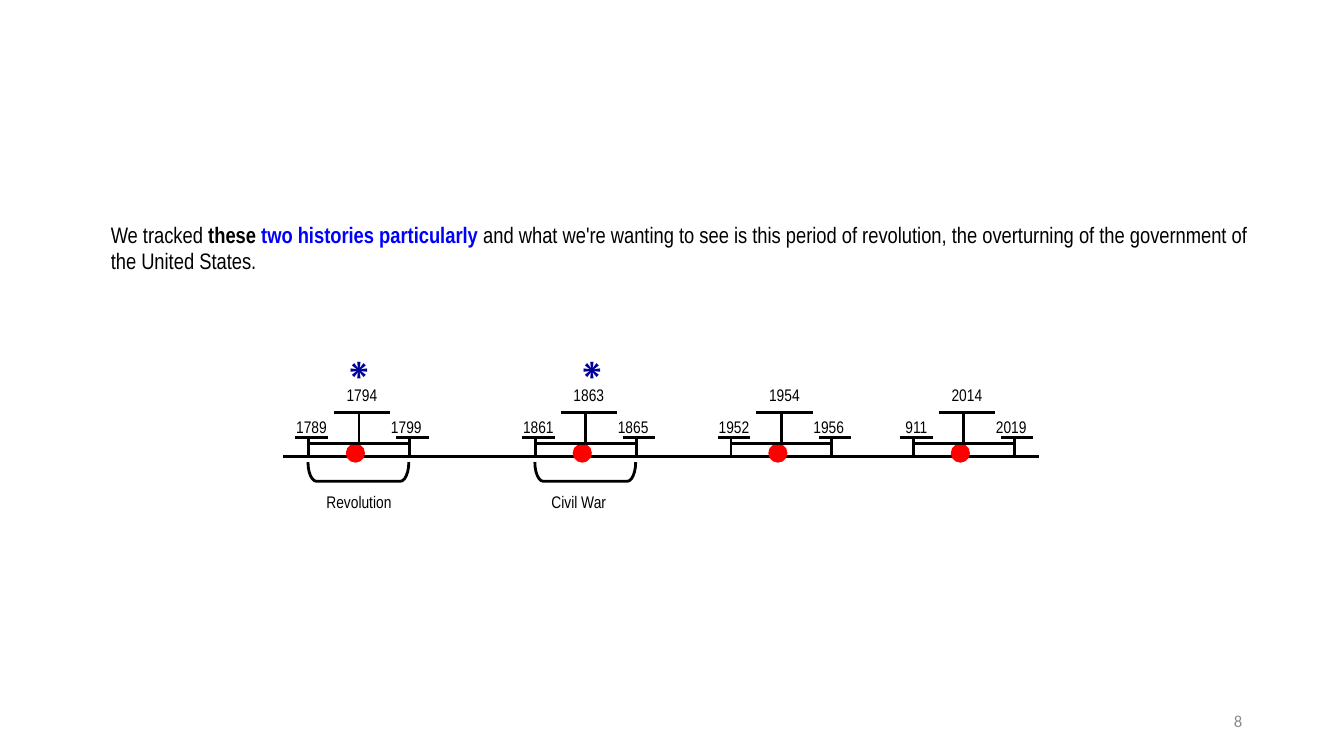
from dataclasses import dataclass

from lxml import etree
from pptx import Presentation
from pptx import util as u
from pptx.dml.color import RGBColor
from pptx.enum import shapes, text
from pptx.oxml import ns
from pptx.slide import Slide

BLACK = RGBColor(0, 0, 0)
BLUE = RGBColor(0, 0, 0xFF)
NAVY = RGBColor(0, 0, 0x99)
RED = RGBColor(0xFF, 0, 0)
GRAY = RGBColor(0x8C, 0x8C, 0x8C)

AXIS, SPAN, LOW, HIGH = 4.53, 4.4, 4.34, 4.09  # heights of the timeline's lines
HALF = 0.5  # half the length of a period
DOT = 0.19
INSET = 0.04

Box = tuple[float, float, float, float]


@dataclass
class Run:
    words: str
    color: RGBColor = BLACK
    bold: bool = False


@dataclass
class Era:
    mid: float
    start: str
    peak: str
    end: str
    name: str = ""
    name_x: float = 0
    star_x: float = 0


ERAS = [
    Era(9.56, "911", "2014", "2019"),
    Era(7.75, "1952", "1954", "1956"),
    Era(5.81, "1861", "1863", "1865", "Civil War", 5.18, 5.62),
    Era(3.56, "1789", "1794", "1799", "Revolution", 3.0, 3.31),
]

INTRO = [
    Run("We tracked "),
    Run("these", bold=True),
    Run(" two histories particularly ", BLUE, True),
    Run("and what we're wanting to see is this period of revolution, "
        "the overturning of the government of the United States."),
]


def write(slide: Slide, box: Box, runs: list[Run], *, size: float = 12,
          font: str = "Arial Narrow", align: text.PP_ALIGN = text.PP_ALIGN.CENTER,
          anchor: text.MSO_ANCHOR = text.MSO_ANCHOR.TOP,
          inset: float | None = INSET) -> None:
    """Add a text box; an inset of None keeps the default margins."""
    frame = slide.shapes.add_textbox(*map(u.Inches, box)).text_frame
    frame.word_wrap = True
    frame.vertical_anchor = anchor
    if inset is not None:
        frame.margin_left = frame.margin_right = u.Inches(inset)
        frame.margin_top = frame.margin_bottom = u.Inches(inset)
    para = frame.paragraphs[0]
    para.alignment = align
    for item in runs:
        run = para.add_run()
        run.text = item.words
        run.font.name = font
        run.font.size = u.Pt(size)
        run.font.bold = item.bold
        run.font.color.rgb = item.color


def rule(slide: Slide, x1: float, y1: float, x2: float, y2: float) -> None:
    """Add a straight black line."""
    line = slide.shapes.add_connector(
        shapes.MSO_CONNECTOR.STRAIGHT, *map(u.Inches, (x1, y1, x2, y2)))
    line.line.color.rgb = BLACK
    line.line.width = u.Pt(2)
    etree.SubElement(line._element.spPr, ns.qn("a:effectLst"))


def tee(slide: Slide, x: float, top: float, left: float, right: float) -> None:
    """Add a post on the axis with a bar across its top."""
    rule(slide, x, top, x, AXIS)
    rule(slide, x - left, top, x + right, top)


def dot(slide: Slide, mid: float) -> None:
    mark = slide.shapes.add_shape(
        shapes.MSO_SHAPE.OVAL, *map(u.Inches, (mid - 0.13, SPAN, DOT, DOT)))
    mark.shadow.inherit = False
    mark.fill.solid()
    mark.fill.fore_color.rgb = RED
    mark.line.fill.background()


def brace(slide: Slide, mid: float) -> None:
    """Add the bracket that opens upward below a period."""
    mark = slide.shapes.add_shape(
        shapes.MSO_SHAPE.LEFT_BRACKET,
        *map(u.Inches, (mid - 0.1, 4.18, 0.19, 2 * HALF)))
    mark.rotation = 270
    mark.adjustments[0] = 0.444
    mark.shadow.inherit = False
    mark.fill.background()
    mark.line.color.rgb = BLACK
    mark.line.width = u.Pt(2)


def draw(slide: Slide, era: Era) -> None:
    mid = era.mid
    tee(slide, mid, HIGH, 0.25, 0.31)
    for x in (mid + HALF, mid - HALF):
        tee(slide, x, LOW, 0.13, 0.19)
    write(slide, (mid - 0.25, 3.78, 0.56, 0.31), [Run(era.peak)])
    write(slide, (mid - 0.75, HIGH, 0.56, 0.25), [Run(era.start)])
    write(slide, (mid + 0.19, HIGH, 0.56, 0.25), [Run(era.end)])
    dot(slide, mid)
    rule(slide, mid - HALF, SPAN, mid + HALF, SPAN)
    if era.name:
        brace(slide, mid)
        write(slide, (era.name_x, 4.84, 1.12, 0.31), [Run(era.name)])
        write(slide, (era.star_x, 3.4, 0.5, 0.38), [Run("⁕", NAVY, True)],
              size=26, font="Times New Roman")


def main() -> None:
    deck = Presentation()
    deck.slide_width, deck.slide_height = u.Inches(13.33), u.Inches(7.5)
    slide = deck.slides.add_slide(deck.slide_layouts[6])
    write(slide, (9.42, 6.95, 3, 0.4), [Run("8", GRAY)], font="Calibri",
          align=text.PP_ALIGN.RIGHT, anchor=text.MSO_ANCHOR.MIDDLE, inset=None)
    write(slide, (1, 2.14, 11.75, 0.94), INTRO, size=16,
          align=text.PP_ALIGN.LEFT, inset=None)
    rule(slide, 2.81, AXIS, 10.31, AXIS)
    for era in ERAS:
        draw(slide, era)
    deck.save("out.pptx")


if __name__ == "__main__":
    main()
